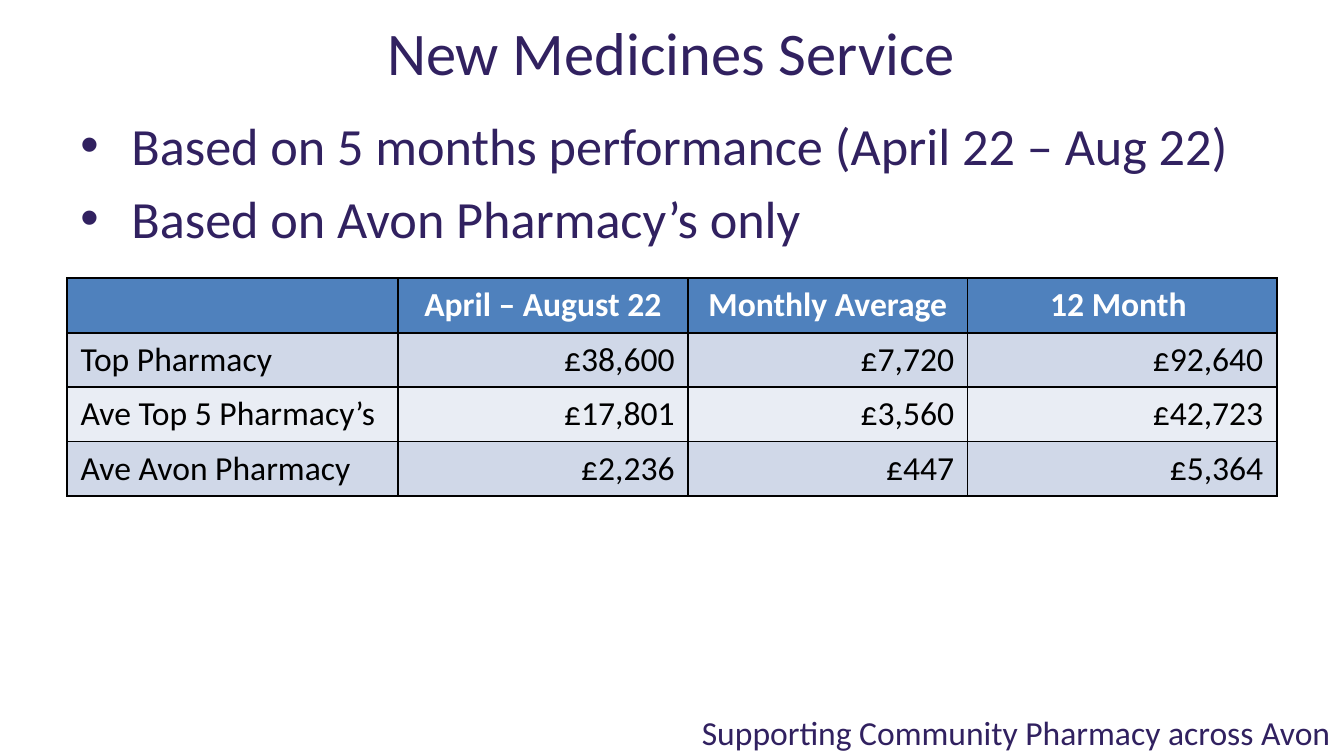
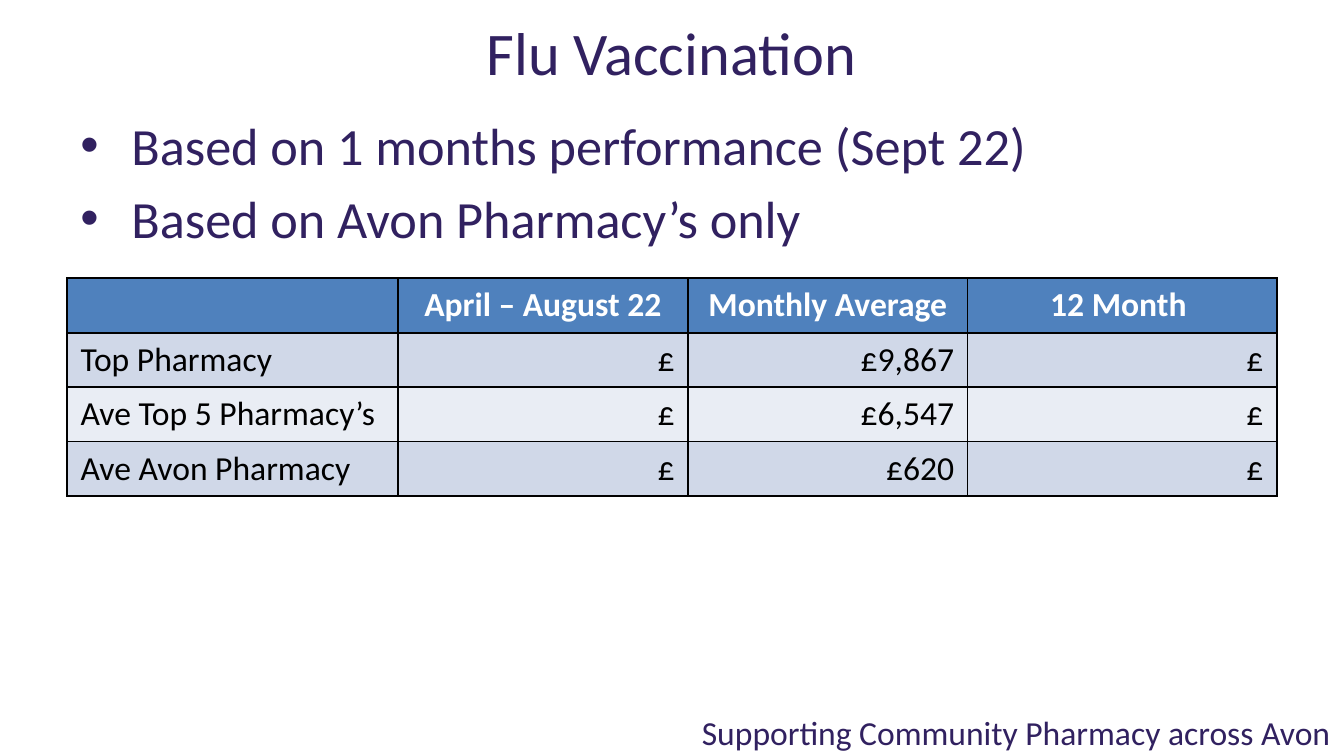
from dataclasses import dataclass

from lxml import etree
from pptx import Presentation
from pptx.dml.color import RGBColor
from pptx.enum.text import MSO_ANCHOR, MSO_AUTO_SIZE, PP_ALIGN
from pptx.oxml.ns import qn
from pptx.util import Inches, Pt

LEFT, CENTER, RIGHT = PP_ALIGN.LEFT, PP_ALIGN.CENTER, PP_ALIGN.RIGHT
TOP, MIDDLE = MSO_ANCHOR.TOP, MSO_ANCHOR.MIDDLE
TITLE_ONLY = 5


@dataclass(frozen=True)
class Theme:
    font: str = "Calibri"
    ink: str = "312160"
    header: str = "4F81BD"
    header_text: str = "FFFFFF"
    bands: tuple = ("D0D8E8", "E9EDF4")
    cell_text: str = "000000"
    title_size: float = 32.4
    bullet_size: float = 28
    small_size: float = 18


@dataclass(frozen=True)
class Box:
    left: float
    top: float
    width: float
    height: float

    def emu(self):
        return [Inches(v) for v in (self.left, self.top, self.width, self.height)]


THEME = Theme()
WIDTH = 10
HEIGHT = WIDTH * 9 / 16
MARGIN = 0.05 * WIDTH
CONTENT_WIDTH = WIDTH - 2 * MARGIN

# Regions shared by every slide
TITLE_BOX = Box(1.38, 0.05, 7.23, 0.66)
BULLET_BOX = Box(MARGIN, 0.79, CONTENT_WIDTH, 3.97)
TABLE_BOX = Box(MARGIN, 2.07, CONTENT_WIDTH, 1.62)
FOOTER_BOX = Box(0.27 * WIDTH, 5.3, 0.73 * WIDTH, 0.3)

FOOTER = "Supporting Community Pharmacy across Avon"
AVON_ONLY = "Based on Avon Pharmacy’s only"
COLUMN_SHARES = (2.46, 2.16, 2.08, 2.3)
COLUMN_HEADS = ("", "April – August 22", "Monthly Average", "12 Month ")
ROW_HEADS = ("Top Pharmacy", "Ave Top 5 Pharmacy’s", "Ave Avon Pharmacy")

SLIDES = (
    ("New Medicines Service",
     "Based on 5 months performance (April 22 – Aug 22)",
     (("£38,600", "£7,720", "£92,640"),
      ("£17,801", "£3,560", "£42,723"),
      ("£2,236", "£447", "£5,364"))),
    ("Flu Vaccination",
     "Based on 1 months performance (Sept 22)",
     (("£", "£9,867", "£"),
      ("£", "£6,547", "£"),
      ("£", "£620", "£"))),
)


def style(paragraph, size, color=THEME.ink, align=LEFT, bold=False):
    paragraph.alignment = align
    font = paragraph.font
    font.name, font.size, font.bold = THEME.font, Pt(size), bold
    font.color.rgb = RGBColor.from_string(color)


def prepare(frame, anchor):
    frame.word_wrap = True
    frame.auto_size = MSO_AUTO_SIZE.NONE
    frame.vertical_anchor = anchor


def add_title(slide, box, text):
    title = slide.shapes.title
    title.left, title.top, title.width, title.height = box.emu()
    prepare(title.text_frame, MIDDLE)
    title.text_frame.text = text
    style(title.text_frame.paragraphs[0], THEME.title_size, align=CENTER)


def add_footer(slide, box):
    frame = slide.shapes.add_textbox(*box.emu()).text_frame
    prepare(frame, MIDDLE)
    frame.text = FOOTER
    style(frame.paragraphs[0], THEME.small_size, align=RIGHT)


def add_bullets(slide, box, lines):
    frame = slide.shapes.add_textbox(*box.emu()).text_frame
    prepare(frame, TOP)
    frame.text = "\n".join(lines)
    for index, paragraph in enumerate(frame.paragraphs):
        properties = paragraph._p.get_or_add_pPr()
        properties.set("marL", str(Inches(0.38)))
        properties.set("indent", str(-Inches(0.38)))
        etree.SubElement(properties, qn("a:buFont"), typeface="Arial")
        etree.SubElement(properties, qn("a:buChar"), char="•")
        if index:
            paragraph.space_before = Pt(0.2 * THEME.bullet_size)
        style(paragraph, THEME.bullet_size)


def add_borders(cell):
    properties = cell._tc.get_or_add_tcPr()
    for side in ("lnL", "lnR", "lnT", "lnB"):
        line = etree.SubElement(properties, qn(f"a:{side}"), w=str(Pt(1)))
        fill = etree.SubElement(line, qn("a:solidFill"))
        etree.SubElement(fill, qn("a:srgbClr"), val=THEME.cell_text)


def fill_cell(cell, text, row, column):
    add_borders(cell)
    is_header = row == 0
    color = THEME.header if is_header else THEME.bands[(row - 1) % 2]
    cell.fill.solid()
    cell.fill.fore_color.rgb = RGBColor.from_string(color)
    cell.text = text
    align = CENTER if is_header else RIGHT if column else LEFT
    style(cell.text_frame.paragraphs[0], THEME.small_size,
          THEME.header_text if is_header else THEME.cell_text, align, is_header)


def add_income_table(slide, box, values):
    rows = [COLUMN_HEADS] + [(head, *amounts) for head, amounts in zip(ROW_HEADS, values)]
    table = slide.shapes.add_table(len(rows), len(COLUMN_HEADS), *box.emu()).table
    for column, share in zip(table.columns, COLUMN_SHARES):
        column.width = Inches(box.width * share / sum(COLUMN_SHARES))
    for row, texts in enumerate(rows):
        table.rows[row].height = Inches(box.height / len(rows))
        for column, text in enumerate(texts):
            fill_cell(table.cell(row, column), text, row, column)


def add_service_slide(presentation, title, period, values):
    slide = presentation.slides.add_slide(presentation.slide_layouts[TITLE_ONLY])
    add_footer(slide, FOOTER_BOX)
    add_title(slide, TITLE_BOX, title)
    add_bullets(slide, BULLET_BOX, (period, AVON_ONLY))
    add_income_table(slide, TABLE_BOX, values)


def main():
    presentation = Presentation()
    presentation.slide_width, presentation.slide_height = Inches(WIDTH), Inches(HEIGHT)
    for content in SLIDES:
        add_service_slide(presentation, *content)
    presentation.save("out.pptx")


if __name__ == "__main__":
    main()
